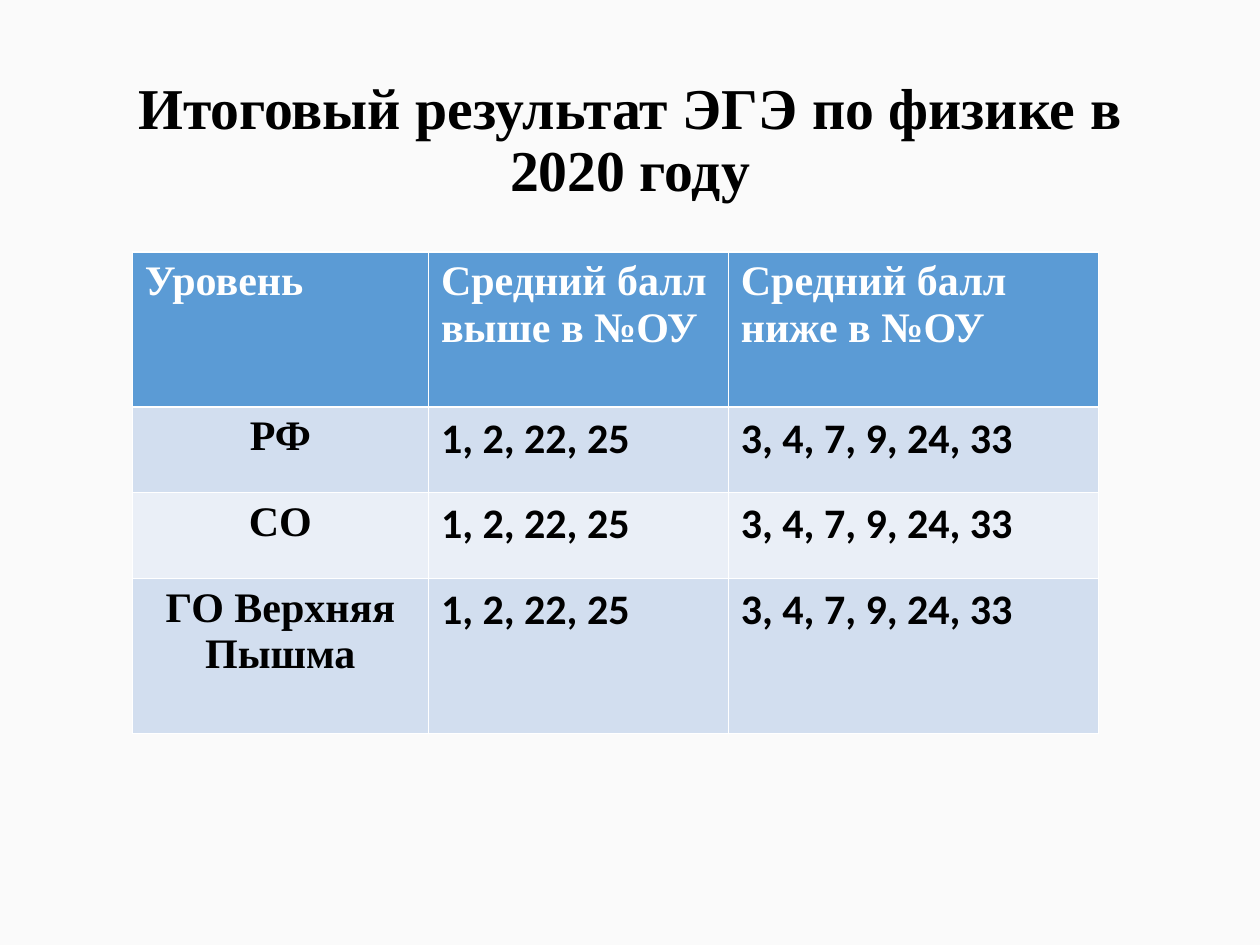
from pptx import Presentation
from pptx.dml.color import RGBColor
from pptx.enum.text import MSO_ANCHOR, PP_ALIGN
from pptx.util import Inches, Pt

SERIF, SANS = "Times New Roman", "Calibri"
HEAD = ["Уровень", "Средний балл выше в №ОУ", "Средний балл ниже в №ОУ"]
LEVELS = ["РФ", "СО", "ГО Верхняя Пышма"]
ABOVE, BELOW = "1, 2, 22, 25", "3, 4, 7, 9, 24, 33"
WIDTHS = [2.35, 2.38, 2.94]
HEIGHTS = [1.23, 0.68, 0.68, 1.23]


def color(code):
    return RGBColor.from_string(code)


def paint(fill, code):
    fill.solid()
    fill.fore_color.rgb = color(code)


def write(frame, text, size, face, ink, align):
    para = frame.paragraphs[0]
    para.text = text
    para.alignment = align
    font = para.font
    font.name, font.size, font.bold = face, Pt(size), True
    font.color.rgb = color(ink)
    return para


def add_title(slide, text):
    box = slide.shapes.add_textbox(Inches(0.69), Inches(0.4), Inches(8.62), Inches(1.45))
    frame = box.text_frame
    frame.word_wrap = True
    frame.vertical_anchor = MSO_ANCHOR.MIDDLE
    para = write(frame, text, 33, SERIF, "000000", PP_ALIGN.CENTER)
    para.line_spacing = 0.9


def add_scores(slide):
    rows = [HEAD] + [[level, ABOVE, BELOW] for level in LEVELS]
    table = slide.shapes.add_table(
        len(rows), len(HEAD), Inches(1.05), Inches(2),
        Inches(sum(WIDTHS)), Inches(sum(HEIGHTS))).table
    for col, width in zip(table.columns, WIDTHS):
        col.width = Inches(width)
    for i, (row, height) in enumerate(zip(rows, HEIGHTS)):
        table.rows[i].height = Inches(height)
        band = "5B9BD5" if i == 0 else "D2DEEF" if i % 2 else "EAEFF7"
        ink = "000000" if i else "FFFFFF"
        for j, text in enumerate(row):
            cell = table.cell(i, j)
            paint(cell.fill, band)
            face = SANS if i and j else SERIF
            align = PP_ALIGN.CENTER if i and not j else PP_ALIGN.LEFT
            write(cell.text_frame, text, 24, face, ink, align)


def main():
    deck = Presentation()
    deck.slide_width, deck.slide_height = Inches(10), Inches(7.5)
    slide = deck.slides.add_slide(deck.slide_layouts[6])
    paint(slide.background.fill, "FAFAFA")
    add_title(slide, "Итоговый результат ЭГЭ по физике в 2020 году")
    add_scores(slide)
    deck.save("out.pptx")


if __name__ == "__main__":
    main()
